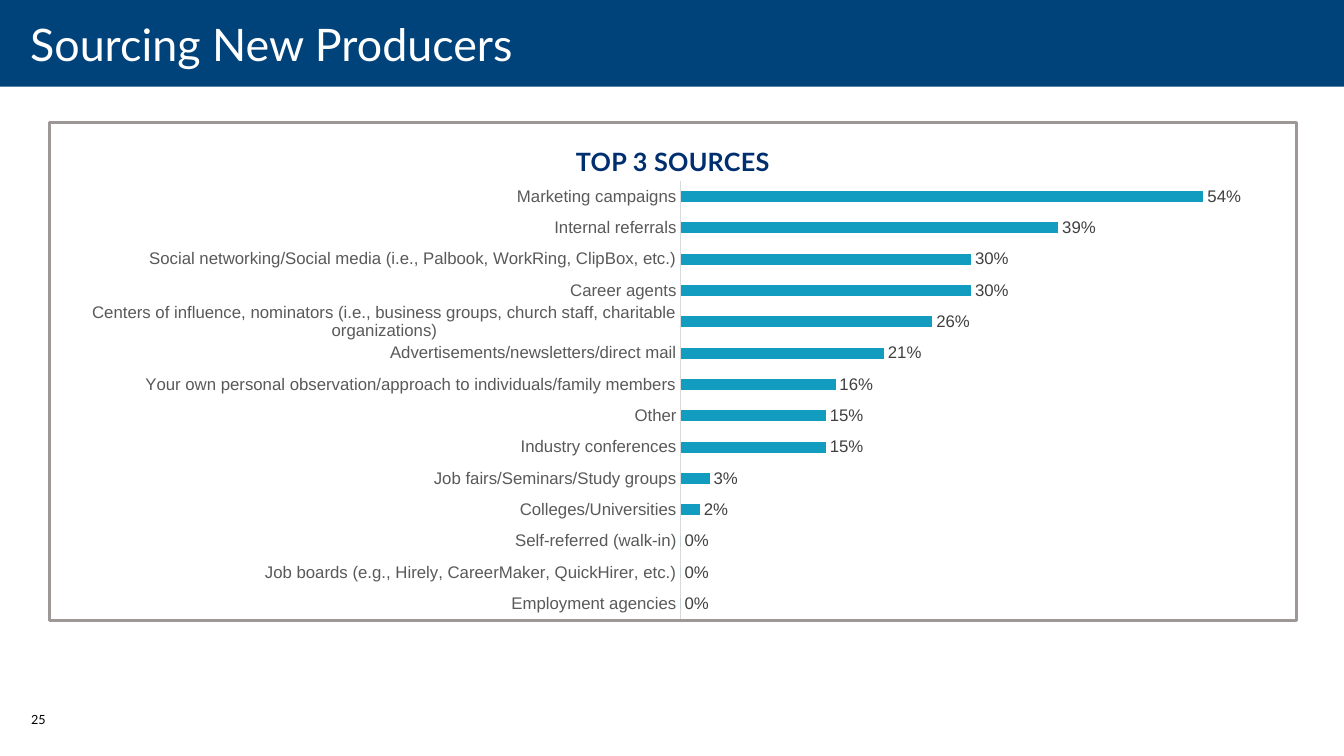
"""Build the slide on sourcing new producers, with a bar chart of the top sources."""
from dataclasses import dataclass

from lxml import etree
from pptx import Presentation
from pptx.chart import data as chart_data
from pptx.dml.color import RGBColor
from pptx.enum import chart as charts, shapes, text
from pptx.oxml import ns
from pptx.util import Pt


@dataclass(frozen=True)
class Theme:
    white: str = "FFFFFF"
    banner: str = "00437B"
    frame: str = "9D9795"
    heading: str = "002F70"
    bar: str = "129DC0"
    category: str = "595959"
    value: str = "404040"
    axis: str = "D9D9D9"
    black: str = "000000"
    title_size: int = 32
    heading_size: int = 18
    label_size: int = 12
    number_size: int = 9
    text_font: str = "Lato"
    chart_font: str = "Arial"


theme = Theme()

SOURCES = [
    ("Marketing campaigns", 0.54),
    ("Internal referrals", 0.39),
    ("Social networking/Social media (i.e., Palbook, WorkRing, ClipBox, etc.)", 0.30),
    ("Career agents", 0.30),
    ("Centers of influence, nominators (i.e., business groups, church staff, "
     "charitable organizations)", 0.26),
    ("Advertisements/newsletters/direct mail", 0.21),
    ("Your own personal observation/approach to individuals/family members", 0.16),
    ("Other", 0.15),
    ("Industry conferences", 0.15),
    ("Job fairs/Seminars/Study groups", 0.03),
    ("Colleges/Universities", 0.02),
    ("Self-referred (walk-in)", 0),
    ("Job boards (e.g., Hirely, CareerMaker, QuickHirer, etc.)", 0),
    ("Employment agencies", 0),
]


def style_font(font, name, size, color, bold=False):
    font.name = name
    font.size = Pt(size)
    font.bold = bold
    font.color.rgb = RGBColor.from_string(color)


def add_text(page, words, place, size, color, bold=False):
    box = page.shapes.add_textbox(*map(Pt, place))
    frame = box.text_frame
    frame.word_wrap = True
    frame.text = words
    style_font(frame.paragraphs[0].runs[0].font, theme.text_font, size, color, bold)
    return frame


deck = Presentation()
deck.slide_width, deck.slide_height = Pt(960), Pt(540)
page = deck.slides.add_slide(deck.slide_layouts[6])

for place, fill, line in [
    ((35.3, 87.8, 890.6, 355.7), theme.white, theme.frame),
    ((0, 0, 960, 61.9), theme.banner, None),
]:
    panel = page.shapes.add_shape(shapes.MSO_SHAPE.RECTANGLE, *map(Pt, place))
    panel.shadow.inherit = False
    panel.fill.solid()
    panel.fill.fore_color.rgb = RGBColor.from_string(fill)
    if line:
        panel.line.color.rgb = RGBColor.from_string(line)
        panel.line.width = Pt(2)
    else:
        panel.line.fill.background()

title = add_text(page, "Sourcing New Producers", (0, -3.6, 960, 69.8),
                 theme.title_size, theme.white)
title.vertical_anchor = text.MSO_ANCHOR.MIDDLE
title.margin_left, title.margin_right = Pt(21.6), Pt(14.4)
title.margin_top = title.margin_bottom = 0

heading = add_text(page, "TOP 3 SOURCES", (35.3, 97.2, 890.6, 31.7),
                   theme.heading_size, theme.heading, bold=True)
heading.vertical_anchor = text.MSO_ANCHOR.MIDDLE
para = heading.paragraphs[0]
para.alignment = text.PP_ALIGN.CENTER
para.line_spacing = 1.2
para.space_after = Pt(12.6)
para.runs[0].font._element.set("spc", "20")

source_data = chart_data.CategoryChartData(number_format="0%")
source_data.categories = [name for name, share in reversed(SOURCES)]
source_data.add_series("Series 1", [share for name, share in reversed(SOURCES)])
chart = page.shapes.add_chart(
    charts.XL_CHART_TYPE.BAR_CLUSTERED,
    Pt(0), Pt(128.9), Pt(912.2), Pt(313.9), source_data,
).chart
chart.has_legend = False
chart.has_title = False
style_font(chart.font, theme.chart_font, 10, theme.black)

category_axis = chart.category_axis
category_axis.major_tick_mark = charts.XL_TICK_MARK.NONE
category_axis.format.line.color.rgb = RGBColor.from_string(theme.axis)
category_axis.format.line.width = Pt(0.75)
style_font(category_axis.tick_labels.font, theme.chart_font, theme.label_size, theme.category)

value_axis = chart.value_axis
value_axis.visible = False
value_axis.has_major_gridlines = False
value_axis.minimum_scale, value_axis.maximum_scale = 0, 0.6

plot = chart.plots[0]
plot.gap_width = 182
plot.vary_by_categories = False
bars = plot.series[0]
bars.format.fill.solid()
bars.format.fill.fore_color.rgb = RGBColor.from_string(theme.bar)
labels = bars.data_labels
labels.show_value = True
labels.number_format = "0%"
labels.number_format_is_linked = False
labels.position = charts.XL_LABEL_POSITION.OUTSIDE_END
style_font(labels.font, theme.chart_font, theme.label_size, theme.value)

plot_area = chart.element.find(".//" + ns.qn("c:plotArea"))
for layout in plot_area.findall(ns.qn("c:layout")):
    plot_area.remove(layout)
layout = etree.Element(ns.qn("c:layout"))
manual = etree.SubElement(layout, ns.qn("c:manualLayout"))
for tag, setting in [
    ("layoutTarget", "inner"), ("xMode", "edge"), ("yMode", "edge"),
    ("x", "0.533"), ("y", "0"), ("w", "0.455"), ("h", "1"),
]:
    etree.SubElement(manual, ns.qn("c:" + tag)).set("val", setting)
plot_area.insert(0, layout)

add_text(page, "25", (15.1, 504.7, 35.3, 28.8), theme.number_size, theme.black)

deck.save("out.pptx")
